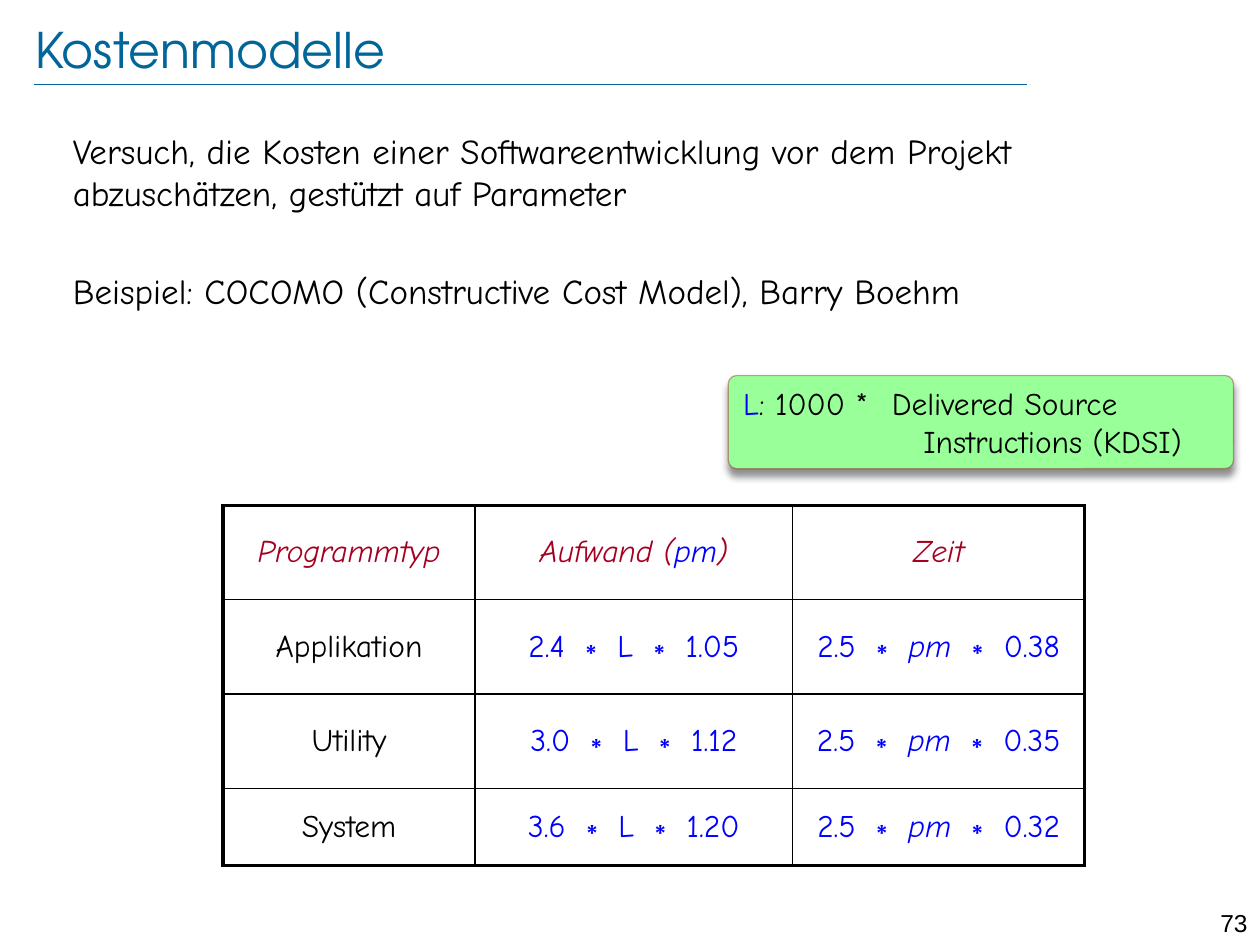
from typing import NamedTuple

from lxml import etree
from pptx import Presentation, util as u
from pptx.dml.color import RGBColor
from pptx.enum import shapes, text
from pptx.oxml import ns, parse_xml

BLACK = RGBColor(0x00, 0x00, 0x00)
TEAL = RGBColor(0x00, 0x66, 0x99)
BLUE = RGBColor(0x00, 0x00, 0xFF)
CRIMSON = RGBColor(0xA5, 0x00, 0x21)
DARK_RED = RGBColor(0x99, 0x00, 0x00)
LIGHT_GREEN = RGBColor(0x99, 0xFF, 0x99)

BODY_FONT, TITLE_FONT, SYMBOL_FONT = "Comic Neue", "TeX Gyre Adventor", "Arial"
GRID = u.Inches(0.1)  # the slide is 100 columns by 75 rows
THIN, THICK = u.Pt(1), u.Pt(2.25)


class Area(NamedTuple):
    column: float
    row: float
    columns: float
    rows: float


class Run(NamedTuple):
    text: str
    color: RGBColor = BLACK
    italic: bool = False
    font: str = BODY_FONT


class ProgramType(NamedTuple):
    name: str
    effort_factor: str
    effort_exponent: str
    time_exponent: str


PROGRAM_TYPES = [
    ProgramType("Applikation", "2.4", "1.05", "0.38"),
    ProgramType("Utility", "3.0", "1.12", "0.35"),
    ProgramType("System", "3.6", "1.20", "0.32"),
]
COLUMN_WIDTHS = [20, 25.2, 23.2]
ROW_HEIGHTS = [7.5, 7.5, 7.5, 6.1]


def grid(*lengths: float) -> list[int]:
    return [round(length * GRID) for length in lengths]


def add_runs(paragraph, size: float, *runs: Run) -> None:
    for part in runs:
        run = paragraph.add_run()
        run.text = part.text
        run.font.size = u.Pt(size)
        run.font.name = part.font
        run.font.italic = part.italic
        run.font.color.rgb = part.color


def add_text_frame(slide, area: Area):
    frame = slide.shapes.add_textbox(*grid(*area)).text_frame
    frame.word_wrap = True
    return frame


def add_title(slide) -> None:
    frame = add_text_frame(slide, Area(2.8, 1.4, 89.7, 5))
    frame.margin_left = frame.margin_top = frame.margin_right = frame.margin_bottom = 0
    frame.vertical_anchor = text.MSO_ANCHOR.MIDDLE
    add_runs(frame.paragraphs[0], 28, Run("Kostenmodelle", TEAL, font=TITLE_FONT))

    rule = slide.shapes.add_connector(
        shapes.MSO_CONNECTOR.STRAIGHT, *grid(2.7, 6.7, 81.5, 6.7))
    rule.line.color.rgb = TEAL
    rule.line.width = u.Pt(0.25)
    etree.SubElement(rule._element.spPr, ns.qn("a:effectLst"))


def add_body(slide) -> None:
    frame = add_text_frame(slide, Area(4.8, 9.8, 88.6, 29))
    add_runs(frame.paragraphs[0], 20, Run(
        "Versuch, die Kosten einer Softwareentwicklung vor dem Projekt "
        "abzuschätzen, gestützt auf Parameter"))
    example = frame.add_paragraph()
    example.space_before = u.Pt(32)
    add_runs(example, 20, Run("Beispiel: COCOMO (Constructive Cost Model), Barry Boehm"))


def add_page_number(slide) -> None:
    paragraph = add_text_frame(slide, Area(94.5, 71.6, 5.5, 2.4)).paragraphs[0]
    paragraph.alignment = text.PP_ALIGN.RIGHT
    add_runs(paragraph, 14, Run("73", font=SYMBOL_FONT))


def add_shadow(shape) -> None:
    shape.shadow.inherit = False
    effects = shape._element.spPr.find(ns.qn("a:effectLst"))
    effects.append(parse_xml(
        f'<a:outerShdw {ns.nsdecls("a")} blurRad="{u.Pt(4)}" dist="{u.Pt(4)}" '
        'dir="5400000" rotWithShape="0"><a:srgbClr val="000000">'
        '<a:alpha val="43000"/></a:srgbClr></a:outerShdw>'))


def add_legend(slide) -> None:
    box = slide.shapes.add_shape(
        shapes.MSO_SHAPE.ROUNDED_RECTANGLE, *grid(57.8, 29.8, 40.1, 7.4))
    box.adjustments[0] = 0.09
    box.fill.solid()
    box.fill.fore_color.rgb = LIGHT_GREEN
    box.line.color.rgb = DARK_RED
    box.line.width = u.Pt(0.75)
    line_color = box.line._ln.find(".//" + ns.qn("a:srgbClr"))
    etree.SubElement(line_color, ns.qn("a:alpha"), val="34000")
    add_shadow(box)

    frame = box.text_frame
    frame.word_wrap = True
    frame.vertical_anchor = text.MSO_ANCHOR.MIDDLE
    first, second = frame.paragraphs[0], frame.add_paragraph()
    first.alignment = second.alignment = text.PP_ALIGN.LEFT
    tabs = etree.SubElement(first._p.get_or_add_pPr(), ns.qn("a:tabLst"))
    etree.SubElement(tabs, ns.qn("a:tab"), pos=str(grid(11.8)[0]), algn="l")
    second._p.get_or_add_pPr().set("marL", str(grid(14.3)[0]))
    add_runs(first, 18, Run("L", BLUE), Run(": 1000 *\tDelivered Source"))
    add_runs(second, 18, Run("Instructions (KDSI)"))


def product(factor: str, variable: Run, exponent: str) -> list[Run]:
    star = Run("∗", BLUE, font=SYMBOL_FONT)
    space = Run(" ", BLUE)
    return [Run(factor + " ", BLUE), star, space, variable, space, star,
            Run(" " + exponent, BLUE)]


def table_rows() -> list[list[list[Run]]]:
    header = [
        [Run("Programmtyp", CRIMSON, True)],
        [Run("Aufwand (", CRIMSON, True), Run("pm", BLUE, True), Run(")", CRIMSON, True)],
        [Run("Zeit", CRIMSON, True)],
    ]
    return [header] + [
        [[Run(kind.name)],
         product(kind.effort_factor, Run("L", BLUE), kind.effort_exponent),
         product("2.5", Run("pm", BLUE, True), kind.time_exponent)]
        for kind in PROGRAM_TYPES]


def set_borders(cell, row: int, column: int) -> None:
    """Draw thick lines on the table's outer edges and thin ones inside."""
    outer = {"lnL": column == 0, "lnR": column == len(COLUMN_WIDTHS) - 1,
             "lnT": row == 0, "lnB": row == len(ROW_HEIGHTS) - 1}
    properties = cell._tc.get_or_add_tcPr()
    for position, (side, is_outer) in enumerate(outer.items()):
        properties.insert(position, parse_xml(
            f'<a:{side} {ns.nsdecls("a")} w="{THICK if is_outer else THIN}">'
            f'<a:solidFill><a:srgbClr val="{BLACK}"/></a:solidFill></a:{side}>'))


def add_cost_table(slide) -> None:
    area = Area(17.7, 40.1, sum(COLUMN_WIDTHS), sum(ROW_HEIGHTS))
    table = slide.shapes.add_table(
        len(ROW_HEIGHTS), len(COLUMN_WIDTHS), *grid(*area)).table
    table.first_row = table.horz_banding = False
    for column, width in zip(table.columns, grid(*COLUMN_WIDTHS)):
        column.width = width
    for row, height in zip(table.rows, grid(*ROW_HEIGHTS)):
        row.height = height
    for row_index, row in enumerate(table_rows()):
        for column_index, runs in enumerate(row):
            cell = table.cell(row_index, column_index)
            cell.fill.background()
            cell.vertical_anchor = text.MSO_ANCHOR.MIDDLE
            set_borders(cell, row_index, column_index)
            paragraph = cell.text_frame.paragraphs[0]
            paragraph.alignment = text.PP_ALIGN.CENTER
            add_runs(paragraph, 18, *runs)


def main() -> None:
    presentation = Presentation()
    presentation.slide_width, presentation.slide_height = grid(100, 75)
    slide = presentation.slides.add_slide(presentation.slide_layouts[6])
    add_title(slide)
    add_page_number(slide)
    add_body(slide)
    add_cost_table(slide)
    add_legend(slide)
    presentation.save("out.pptx")


if __name__ == "__main__":
    main()
